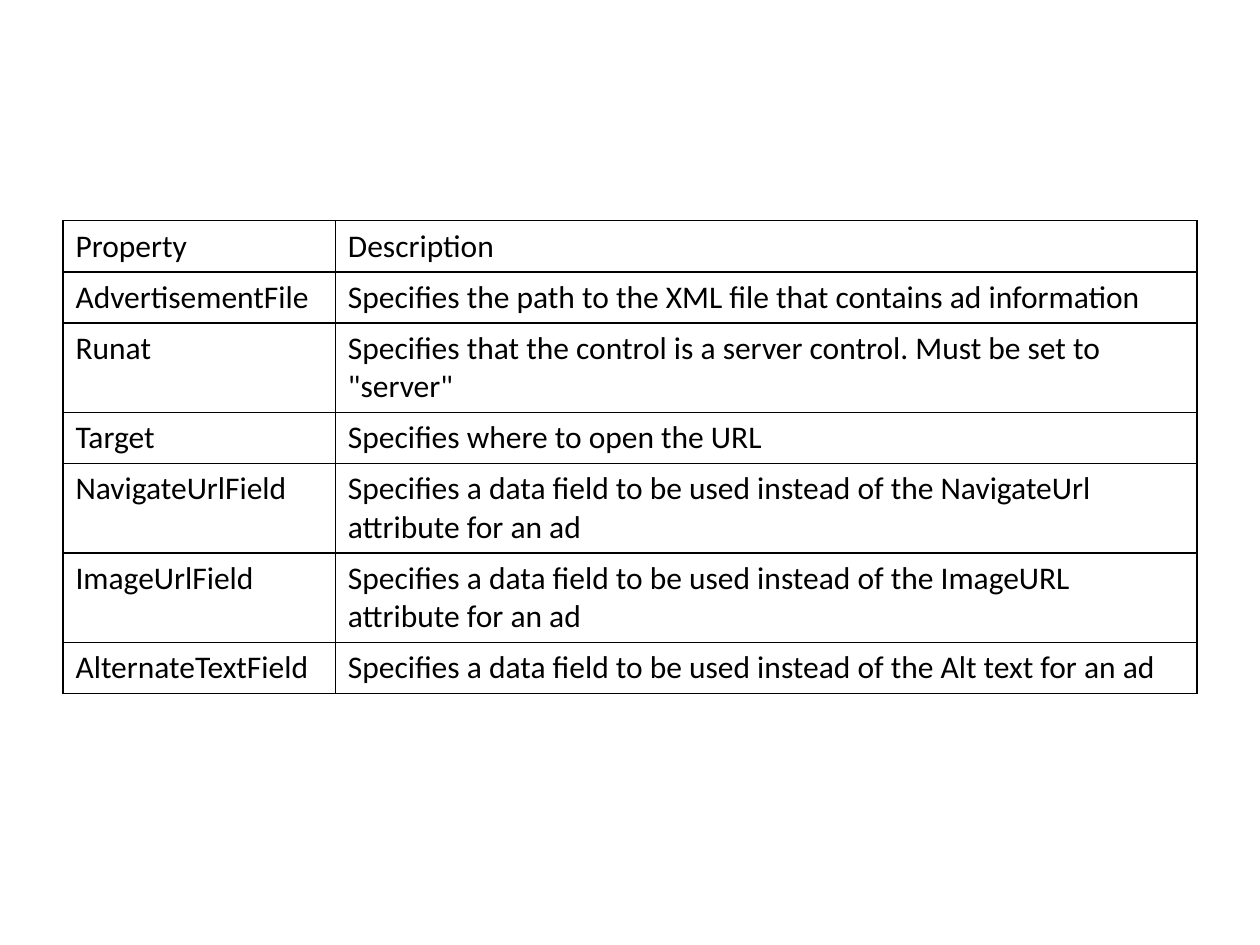
from dataclasses import dataclass

import pptx
import pptx.dml.color
import pptx.oxml
import pptx.oxml.ns
import pptx.util
from pptx.util import Cm


@dataclass(frozen=True)
class Theme:
    font: str = "Calibri"
    size: int = 18
    text: str = "000000"
    border: str = "000000"
    border_width: int = 1


THEME = Theme()

PROPERTIES = [
    ("Property", "Description"),
    ("AdvertisementFile", "Specifies the path to the XML file that contains ad information"),
    ("Runat", 'Specifies that the control is a server control. Must be set to "server"'),
    ("Target", "Specifies where to open the URL"),
    ("NavigateUrlField", "Specifies a data field to be used instead of the NavigateUrl attribute for an ad"),
    ("ImageUrlField", "Specifies a data field to be used instead of the ImageURL attribute for an ad"),
    ("AlternateTextField", "Specifies a data field to be used instead of the Alt text for an ad"),
]


def add_borders(cell):
    properties = cell._tc.get_or_add_tcPr()
    width = pptx.util.Pt(THEME.border_width)
    for side in ("lnL", "lnR", "lnT", "lnB"):
        properties.append(pptx.oxml.parse_xml(
            f'<a:{side} {pptx.oxml.ns.nsdecls("a")} w="{width}">'
            f'<a:solidFill><a:srgbClr val="{THEME.border}"/></a:solidFill></a:{side}>'
        ))


def write_cell(cell, text):
    span = cell.text_frame.paragraphs[0].add_run()
    span.text = text
    span.font.name = THEME.font
    span.font.size = pptx.util.Pt(THEME.size)
    span.font.bold = False
    span.font.color.rgb = pptx.dml.color.RGBColor.from_string(THEME.text)


def add_grid(page, rows, left, top, column_widths, row_height):
    """Add an unfilled table with thin borders around every cell."""
    frame = page.shapes.add_table(
        len(rows), len(column_widths), left, top,
        sum(column_widths), row_height * len(rows),
    )
    table = frame.table
    table.first_row = False
    table.horz_banding = False
    for column, width in zip(table.columns, column_widths):
        column.width = width
    for row, texts in zip(table.rows, rows):
        row.height = row_height
        for cell, text in zip(row.cells, texts):
            write_cell(cell, text)
            add_borders(cell)
            cell.fill.background()


def main():
    deck = pptx.Presentation()
    deck.slide_width, deck.slide_height = Cm(25.4), Cm(19.05)
    page = deck.slides.add_slide(deck.slide_layouts[6])
    add_grid(page, PROPERTIES, Cm(1.27), Cm(4.45), [Cm(5.49), Cm(17.37)], Cm(1.03))
    deck.save("out.pptx")


if __name__ == "__main__":
    main()
